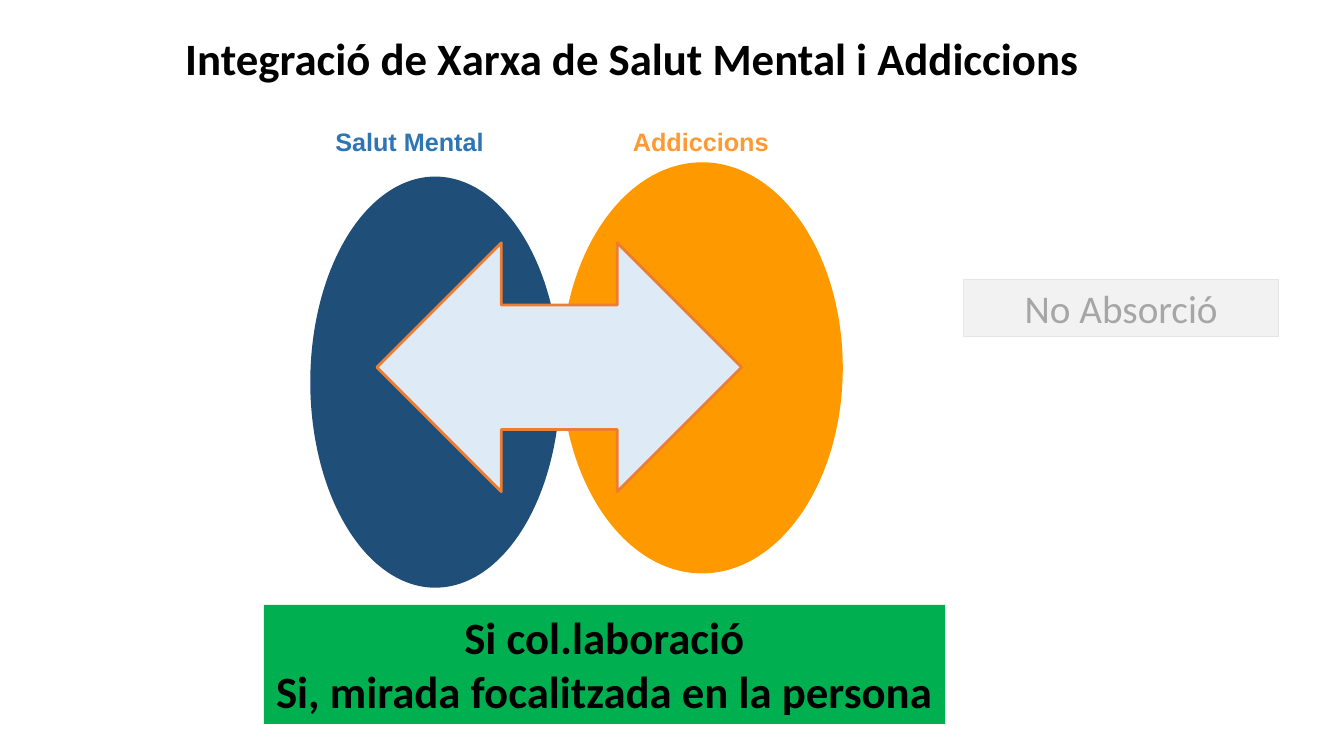
import pptx
import pptx.util
import pptx.dml.color
import pptx.enum.shapes
import pptx.enum.text

Cm = pptx.util.Cm
Pt = pptx.util.Pt
KIND = pptx.enum.shapes.MSO_SHAPE

# Content: places are left, top, width, height in cm
TEXTS = [
    (["Integració de Xarxa de Salut Mental i Addiccions"], (3.91, 0.66, 24.05, 1.63),
     dict(size=32, bold=True, wrap=True)),
    (["Addiccions"], (15.7, 3.07, 3.96, 1.02),
     dict(size=18, bold=True, font="Arial", color="FF9933", align="LEFT")),
    (["Salut Mental"], (8.2, 3.07, 4.29, 1.02),
     dict(size=18, bold=True, font="Arial", color="2E75B6", align="LEFT")),
]
SHAPES = [
    (KIND.OVAL, (14.15, 4.09, 7.09, 10.36), "FF9900", None),
    (KIND.OVAL, (7.82, 4.45, 6.3, 10.36), "1F4E79", None),
    (KIND.LEFT_RIGHT_ARROW, (9.5, 6.12, 9.19, 6.27), "DEEBF7", ("ED7D31", 2)),
]
LABELS = [
    (["No Absorció"], (24.28, 7.04, 7.95, 1.45), "F2F2F2", ("E7E6E6", 0.75),
     dict(size=28, color="A6A6A6", wrap=True)),
    (["Si col.laboració", "Si, mirada focalitzada en la persona"],
     (6.65, 15.24, 17.17, 3), "00B050", None, dict(size=32, bold=True, wrap=True)),
]


def paint(target, color):
    target.solid()
    target.fore_color.rgb = pptx.dml.color.RGBColor.from_string(color)


def write(box, lines, size, bold=False, font="Calibri", color="000000",
          align="CENTER", wrap=False):
    frame = box.text_frame
    frame.word_wrap = wrap
    frame.vertical_anchor = pptx.enum.text.MSO_ANCHOR.TOP
    frame.text = "\n".join(lines)
    for para in frame.paragraphs:
        para.alignment = pptx.enum.text.PP_ALIGN[align]
        for span in para.runs:
            span.font.size = Pt(size)
            span.font.bold = bold
            span.font.name = font
            paint(span.font.fill, color)


def draw(page, kind, place, fill, line):
    shape = page.shapes.add_shape(kind, *map(Cm, place))
    shape.shadow.inherit = False
    paint(shape.fill, fill)
    if line:
        color, width = line
        paint(shape.line.fill, color)
        shape.line.width = Pt(width)
    else:
        shape.line.fill.background()
    return shape


def main():
    deck = pptx.Presentation()
    deck.slide_width, deck.slide_height = Cm(33.87), Cm(19.05)
    page = deck.slides.add_slide(deck.slide_layouts[6])

    # Title and names of the two networks
    for lines, place, style in TEXTS:
        write(page.shapes.add_textbox(*map(Cm, place)), lines, **style)

    # Two networks joined by the arrow
    for kind, place, fill, line in SHAPES:
        draw(page, kind, place, fill, line)

    # Filled messages
    for lines, place, fill, line, style in LABELS:
        write(draw(page, KIND.RECTANGLE, place, fill, line), lines, **style)

    deck.save("out.pptx")


if __name__ == "__main__":
    main()
